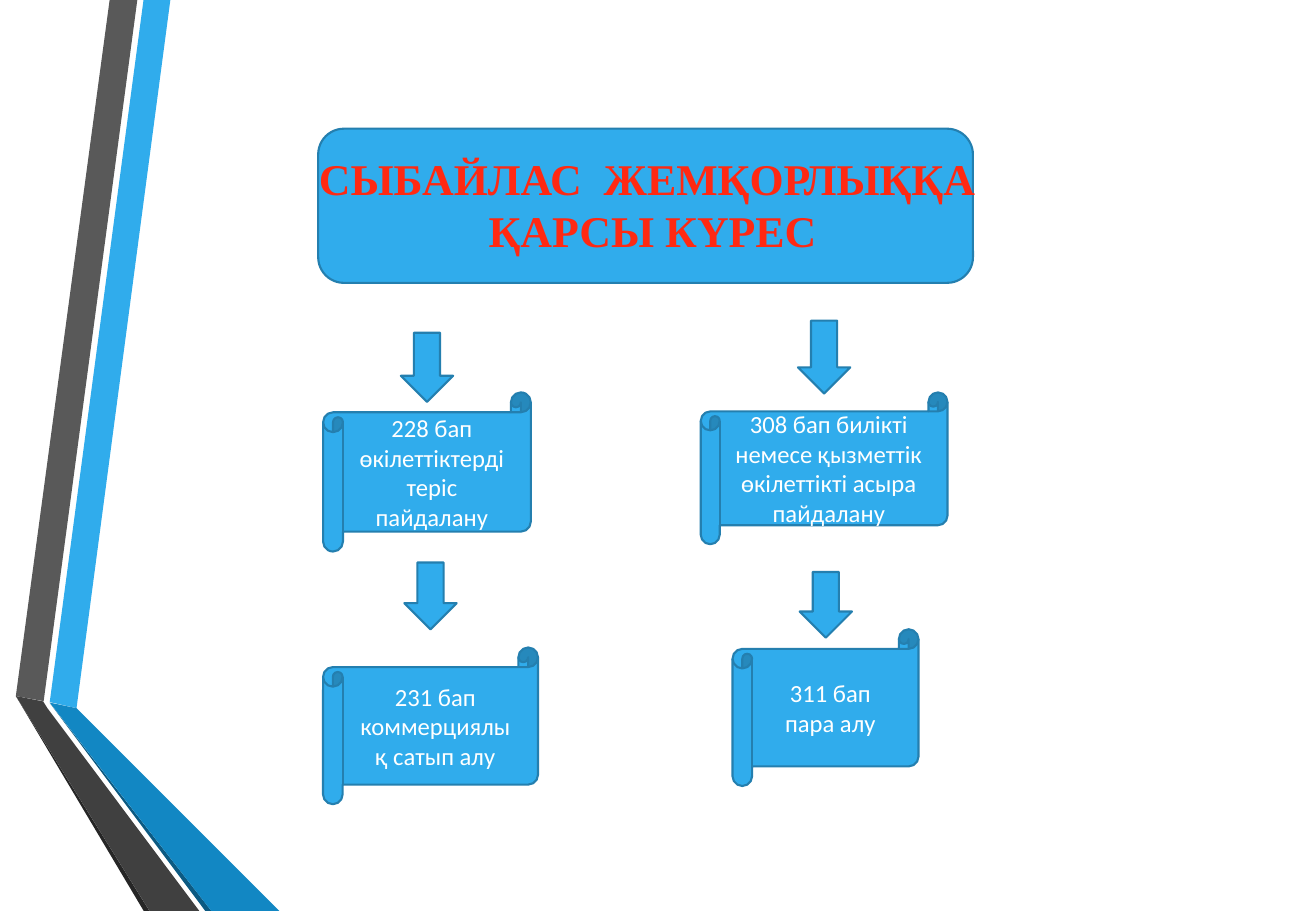
from pptx import Presentation
from pptx.dml.color import RGBColor
from pptx.enum.shapes import MSO_SHAPE
from pptx.enum.text import MSO_ANCHOR, MSO_AUTO_SIZE, PP_ALIGN
from pptx.util import Pt

SCROLL = MSO_SHAPE.HORIZONTAL_SCROLL
ARROW = MSO_SHAPE.DOWN_ARROW
ROUNDED = MSO_SHAPE.ROUNDED_RECTANGLE
CENTER = PP_ALIGN.CENTER
MIDDLE = MSO_ANCHOR.MIDDLE
NO_FIT = MSO_AUTO_SIZE.NONE
TITLE_ONLY = 5

COLORS = {
    "blue": "30ACEC", "edge": "247FAF", "deep": "1287C3", "navy": "0C5A82",
    "gray": "595959", "charcoal": "404040", "black": "262626",
    "white": "FFFFFF", "red": "FF2912",
}

RIBBONS = [
    ("blue", [(20.1, 416.2), (36, 419.8), (91.6, 0), (75.7, 0)]),
    ("gray", [(72, 0), (55.6, 0), (0, 412.6), (16.5, 415.6)]),
    ("black", [(0, 412.6), (75.8, 540), (79.2, 540)]),
    ("navy", [(20.1, 416.7), (112.3, 540), (115.9, 540)]),
    ("deep", [(20.1, 416.5), (115.9, 540), (156.2, 540), (36, 419.8)]),
    ("charcoal", [(108.7, 540), (18.7, 419.8), (16.2, 415.8), (0, 412.6), (79.2, 540)]),
]

TITLE_LINES = ["СЫБАЙЛАС  ЖЕМҚОРЛЫҚҚА ", "ҚАРСЫ КҮРЕС"]

COLUMNS = [
    ((191.5, 197.3), [
        ((46.1, 0, 31, 41), (0, 35.3, 123.1, 94.3),
         "228 бап өкілеттіктерді теріс пайдалану"),
        ((48.2, 136.1, 31, 39.6), (0, 186.5, 127.4, 92.9),
         "231 бап коммерциялық сатып алу"),
    ]),
    ((415.4, 190.1), [
        ((57.6, 0, 31, 43.2), (0, 42.5, 146.2, 90),
         "308 бап билікті немесе қызметтік өкілеттікті асыра пайдалану"),
        ((58.6, 149, 31, 38.9), (18.8, 182.9, 110.2, 92.9),
         "311 бап пара алу"),
    ]),
]


def color(name):
    """Return the named colour."""
    return RGBColor.from_string(COLORS[name])


def add_block(page, kind, left, top, width, height):
    """Add a blue outlined preset shape."""
    shape = page.shapes.add_shape(kind, Pt(left), Pt(top), Pt(width), Pt(height))
    shape.shadow.inherit = False
    shape.fill.solid()
    shape.fill.fore_color.rgb = color("blue")
    shape.line.color.rgb = color("edge")
    shape.line.width = Pt(1.25)
    return shape


def write(para, text, font, size, shade, bold=False):
    """Add one centred run to a paragraph."""
    para.alignment = CENTER
    span = para.add_run()
    span.text = text
    span.font.name = font
    span.font.size = Pt(size)
    span.font.bold = bold
    span.font.color.rgb = color(shade)


def add_ribbons(page, left, top):
    """Draw the folded ribbons along the left edge."""
    for shade, corners in RIBBONS:
        points = [(Pt(left + x), Pt(top + y)) for x, y in corners]
        builder = page.shapes.build_freeform(*points[0])
        builder.add_line_segments(points[1:], close=True)
        ribbon = builder.convert_to_shape()
        ribbon.shadow.inherit = False
        ribbon.fill.solid()
        ribbon.fill.fore_color.rgb = color(shade)
        ribbon.line.fill.background()


def add_heading(page, left, top, width, height):
    """Place the title over its rounded panel."""
    panel = add_block(page, ROUNDED, left, top, width, height)
    title = page.shapes.title
    title.left, title.top = Pt(left - 7.2), Pt(top + 10.1)
    title.width, title.height = Pt(width + 23), Pt(height - 22.3)
    panel.element.addnext(title.element)
    frame = title.text_frame
    frame.word_wrap = False
    frame.auto_size = NO_FIT
    frame.vertical_anchor = MIDDLE
    for index, line in enumerate(TITLE_LINES):
        para = frame.add_paragraph() if index else frame.paragraphs[0]
        para.line_spacing = 1.0
        para.space_before = Pt(0)
        write(para, line, "Times New Roman", 26, "red", True)


def add_column(page, left, top, steps):
    """Stack arrows and the scrolls they lead to."""
    for arrow, scroll, text in steps:
        for kind, (x, y, width, height) in ((ARROW, arrow), (SCROLL, scroll)):
            shape = add_block(page, kind, left + x, top + y, width, height)
        frame = shape.text_frame
        frame.word_wrap = True
        frame.vertical_anchor = MIDDLE
        write(frame.paragraphs[0], text, "Calibri", 14.6, "white")


def main():
    """Build and save the slide."""
    deck = Presentation()
    deck.slide_width, deck.slide_height = Pt(780), Pt(540)
    page = deck.slides.add_slide(deck.slide_layouts[TITLE_ONLY])
    add_ribbons(page, 9.4, 0)
    for (left, top), steps in COLUMNS:
        add_column(page, left, top, steps)
    add_heading(page, 188.6, 76.3, 388.1, 91.4)
    deck.save("out.pptx")


if __name__ == "__main__":
    main()
